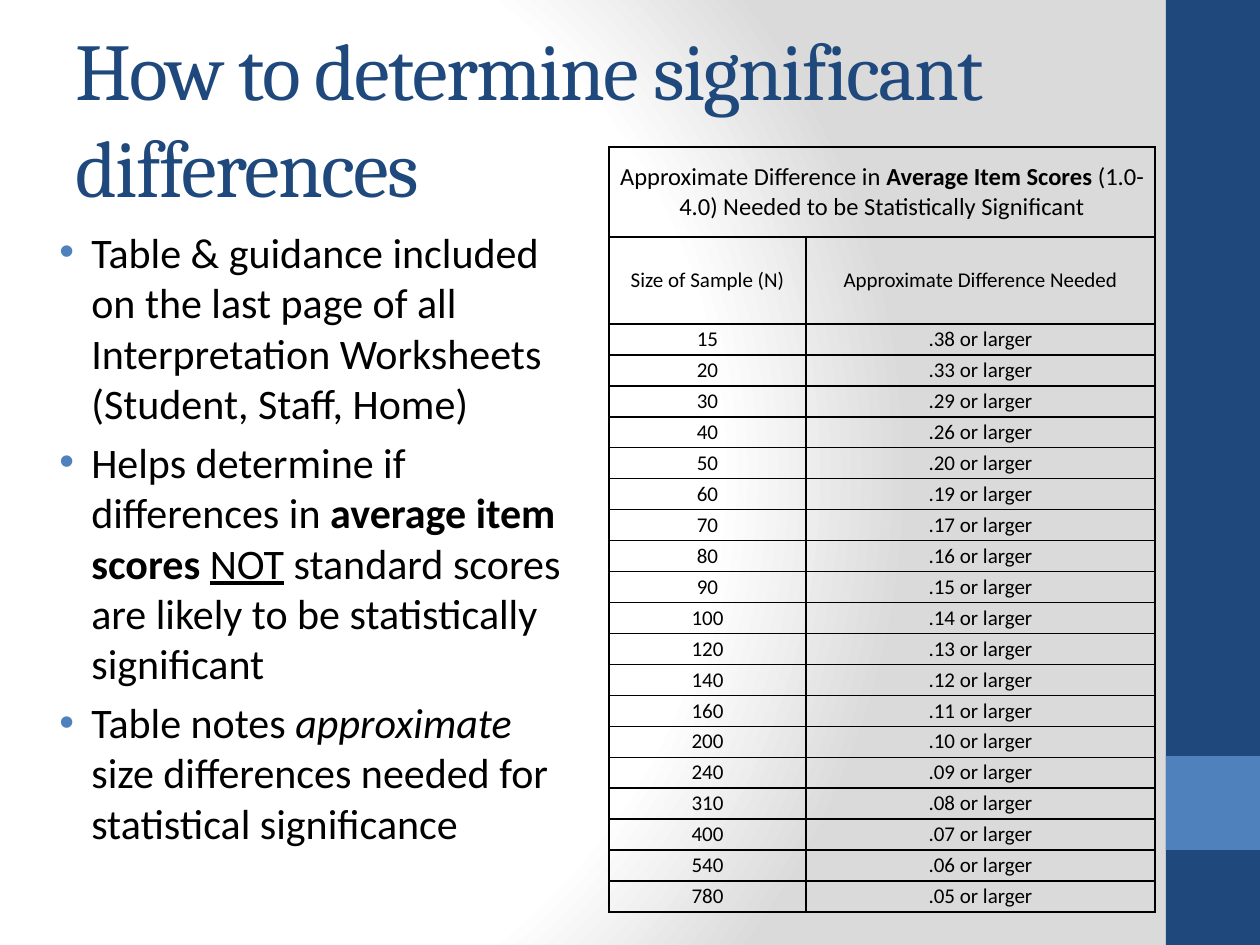
import dataclasses

import pptx
import pptx.dml.color
import pptx.enum.shapes
import pptx.enum.text
import pptx.oxml
import pptx.oxml.ns
import pptx.util

NAMESPACE = pptx.oxml.ns.nsdecls("a")
DIFFERENCES = {
    15: ".38", 20: ".33", 30: ".29", 40: ".26", 50: ".20", 60: ".19", 70: ".17",
    80: ".16", 90: ".15", 100: ".14", 120: ".13", 140: ".12", 160: ".11",
    200: ".10", 240: ".09", 310: ".08", 400: ".07", 540: ".06", 780: ".05",
}
BULLETS = [
    [("Table & guidance included on the last page of all Interpretation Worksheets "
      "(Student, Staff, Home)", "")],
    [("Helps determine if differences in ", ""), ("average item scores ", "bold"),
     ("NOT", "underline"),
     (" standard scores are likely to be statistically significant", "")],
    [("Table notes ", ""), ("approximate", "italic"),
     (" size differences needed for statistical significance", "")],
]
TABLE_TITLE = [("Approximate Difference in ", ""), ("Average Item Scores ", "bold"),
               ("(1.0-4.0) Needed to be Statistically Significant", "")]


def px(length):
    return pptx.util.Emu(round(length * 914400 / 126))


@dataclasses.dataclass(frozen=True)
class Theme:
    navy: str = "1F497D"
    blue: str = "4F81BD"
    ink: str = "000000"
    paper: str = "FFFFFF"
    shade: str = "DADADA"
    heading_font: str = "Cambria"
    body_font: str = "Calibri"
    title_size: int = 46
    body_size: int = 24
    table_title_size: int = 14
    table_size: int = 12


class SlideBuilder:
    """Adds styled elements to the current slide."""

    def __init__(self, slide, theme):
        self.slide = slide
        self.theme = theme

    def background(self):
        self.slide.background.fill.gradient()
        gradient = self.slide._element.find(".//" + pptx.oxml.ns.qn("a:gradFill"))
        stops = "".join(
            f'<a:gs pos="{position * 1000}"><a:srgbClr val="{color}"/></a:gs>'
            for position, color in
            [(0, self.theme.paper), (75, self.theme.paper), (100, self.theme.shade)])
        gradient.getparent().replace(gradient, pptx.oxml.parse_xml(
            f'<a:gradFill {NAMESPACE} rotWithShape="1"><a:gsLst>{stops}</a:gsLst>'
            '<a:path path="circle"><a:fillToRect l="20000" t="50000" r="100000" '
            'b="50000"/></a:path></a:gradFill>'))

    def bar(self, left, top, width, height, color):
        shape = self.slide.shapes.add_shape(
            pptx.enum.shapes.MSO_SHAPE.RECTANGLE, px(left), px(top), px(width), px(height))
        shape.shadow.inherit = False
        shape.fill.solid()
        shape.fill.fore_color.rgb = pptx.dml.color.RGBColor.from_string(color)
        shape.line.fill.background()

    def text_frame(self, left, top, width, height):
        frame = self.slide.shapes.add_textbox(
            px(left), px(top), px(width), px(height)).text_frame
        frame.word_wrap = True
        return frame

    def add_runs(self, paragraph, runs, size, color, font_name):
        font = paragraph.font
        font.size = pptx.util.Pt(size)
        font.name = font_name
        font.color.rgb = pptx.dml.color.RGBColor.from_string(color)
        for text, emphasis in runs:
            run = paragraph.add_run()
            run.text = text
            run.font.bold = True if emphasis == "bold" else None
            run.font.italic = True if emphasis == "italic" else None
            run.font.underline = True if emphasis == "underline" else None

    def title(self, text, left, top, width, height):
        frame = self.text_frame(left, top, width, height)
        frame.vertical_anchor = pptx.enum.text.MSO_ANCHOR.MIDDLE
        paragraph = frame.paragraphs[0]
        self.add_runs(paragraph, [(text, "")], self.theme.title_size, self.theme.navy,
                      self.theme.heading_font)
        paragraph.font._element.set("spc", "-100")

    def bullets(self, items, left, top, width, height):
        frame = self.text_frame(left, top, width, height)
        frame._txBody.bodyPr.set("numCol", "2")
        for index, runs in enumerate(items):
            paragraph = frame.add_paragraph() if index else frame.paragraphs[0]
            paragraph.space_before = pptx.util.Pt(self.theme.body_size * 0.2)
            properties = paragraph._p.get_or_add_pPr()
            properties.set("marL", str(px(47)))
            properties.set("indent", str(px(-32)))
            for markup in (
                    f'<a:buClr {NAMESPACE}><a:srgbClr val="{self.theme.blue}"/></a:buClr>',
                    f'<a:buFont {NAMESPACE} typeface="Arial"/>',
                    f'<a:buChar {NAMESPACE} char="•"/>'):
                properties.append(pptx.oxml.parse_xml(markup))
            self.add_runs(paragraph, runs, self.theme.body_size, self.theme.ink,
                          self.theme.body_font)

    def cell(self, cell, runs, size):
        cell.vertical_anchor = pptx.enum.text.MSO_ANCHOR.MIDDLE
        cell.margin_left = cell.margin_right = px(9)
        cell.margin_top = cell.margin_bottom = 0
        properties = cell._tc.get_or_add_tcPr()
        for side in "LRTB":
            properties.append(pptx.oxml.parse_xml(
                f'<a:ln{side} {NAMESPACE} w="12700"><a:solidFill><a:srgbClr '
                f'val="{self.theme.ink}"/></a:solidFill></a:ln{side}>'))
        cell.fill.background()
        paragraph = cell.text_frame.paragraphs[0]
        paragraph.alignment = pptx.enum.text.PP_ALIGN.CENTER
        self.add_runs(paragraph, runs, size, self.theme.ink, self.theme.body_font)

    def table(self, title, rows, left, top, widths, heights):
        table = self.slide.shapes.add_table(
            len(heights), len(widths), px(left), px(top),
            px(sum(widths)), px(sum(heights))).table
        table.first_row = table.horz_banding = False
        for column, width in zip(table.columns, widths):
            column.width = px(width)
        for row, height in zip(table.rows, heights):
            row.height = px(height)
        table.cell(0, 0).merge(table.cell(0, len(widths) - 1))
        title_cells = [title] + [[]] * (len(widths) - 1)
        for column, runs in enumerate(title_cells):
            self.cell(table.cell(0, column), runs, self.theme.table_title_size)
        for row, values in enumerate(rows, start=1):
            for column, value in enumerate(values):
                self.cell(table.cell(row, column), [(value, "")], self.theme.table_size)


def main():
    presentation = pptx.Presentation()
    presentation.slide_width, presentation.slide_height = px(1260), px(945)
    theme = Theme()
    slide = presentation.slides.add_slide(presentation.slide_layouts[6])
    builder = SlideBuilder(slide, theme)
    builder.background()
    builder.bar(1166, 0, 94, 945, theme.navy)
    builder.bar(1166, 756, 94, 94, theme.blue)
    builder.title("How to determine significant differences", 63, 38, 1050, 157)
    builder.bullets(BULLETS, 32, 220, 1081, 725)
    rows = [("Size of Sample (N)", "Approximate Difference Needed")]
    rows += [(str(size), f"{difference} or larger")
             for size, difference in DIFFERENCES.items()]
    builder.table(TABLE_TITLE, rows, 609, 147, [197, 349],
                  [90, 87] + [31] * len(DIFFERENCES))
    presentation.save("out.pptx")


if __name__ == "__main__":
    main()
